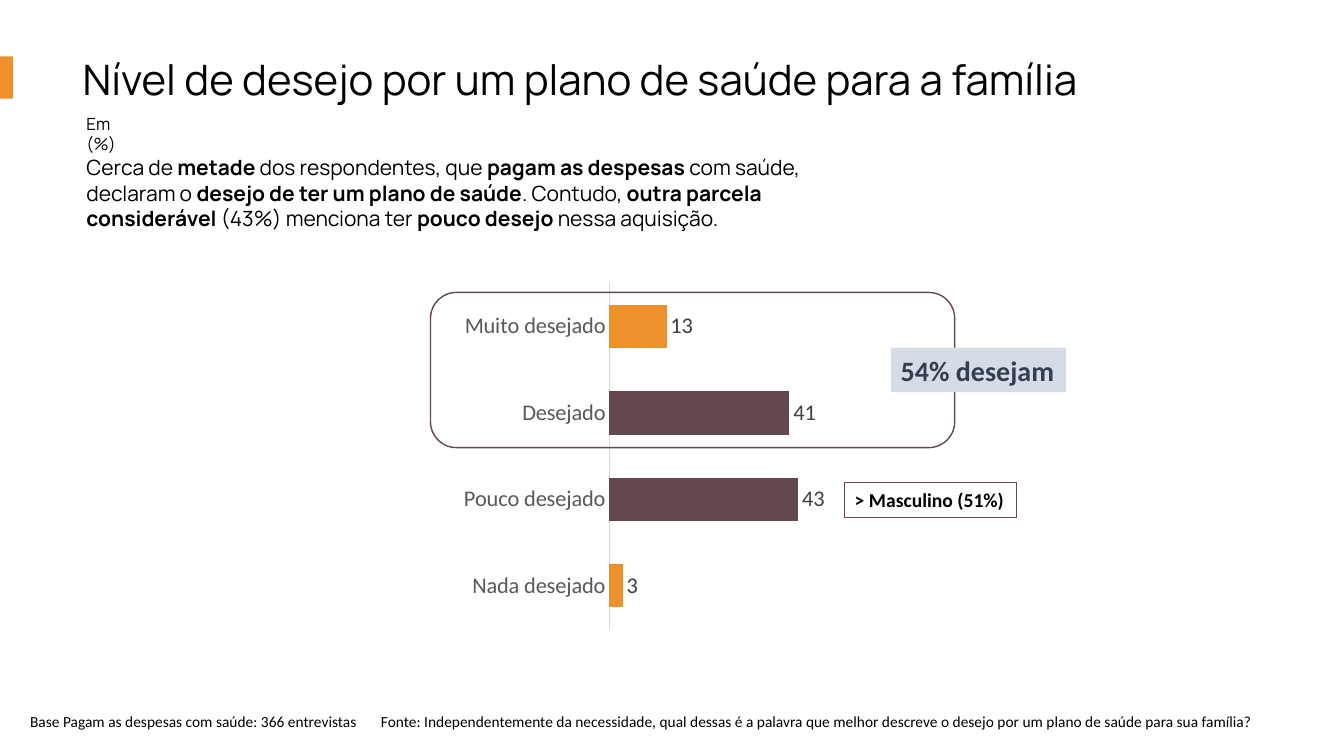
import pptx
import pptx.chart.data
import pptx.dml.color
import pptx.enum.chart
import pptx.enum.shapes
import pptx.enum.text
import pptx.oxml
import pptx.oxml.ns
import pptx.util

Cm = pptx.util.Cm
Pt = pptx.util.Pt
RGBColor = pptx.dml.color.RGBColor
MSO_SHAPE = pptx.enum.shapes.MSO_SHAPE
MSO_ANCHOR = pptx.enum.text.MSO_ANCHOR

BLACK = RGBColor(0x00, 0x00, 0x00)
WHITE = RGBColor(0xFF, 0xFF, 0xFF)
ORANGE = RGBColor(0xEE, 0x90, 0x2C)
PLUM = RGBColor(0x65, 0x48, 0x4D)
PALE_BLUE = RGBColor(0xD6, 0xDC, 0xE5)
NAVY = RGBColor(0x33, 0x3F, 0x50)
AXIS_TEXT = RGBColor(0x59, 0x59, 0x59)
LABEL_TEXT = RGBColor(0x40, 0x40, 0x40)
AXIS_LINE = RGBColor(0xD9, 0xD9, 0xD9)


def write(sp, text, size, font="Calibri", color=BLACK, bold=False, wrap=True,
          anchor=MSO_ANCHOR.TOP):
    """Fill a shape with one left-aligned paragraph; *asterisks* mark bold parts."""
    tf = sp.text_frame
    tf.word_wrap = wrap
    tf.vertical_anchor = anchor
    p = tf.paragraphs[0]
    p.alignment = pptx.enum.text.PP_ALIGN.LEFT
    for i, part in enumerate(text.split("*")):
        r = p.add_run()
        r.text = part
        r.font.size = Pt(size)
        r.font.name = font
        r.font.color.rgb = color
        r.font.bold = bold or i % 2 == 1
    return p


def add_box(kind, left, top, width, height, fill=None, line=None, weight=1):
    sp = s.shapes.add_shape(kind, Cm(left), Cm(top), Cm(width), Cm(height))
    sp.shadow.inherit = False
    if fill is None:
        sp.fill.background()
    else:
        sp.fill.solid()
        sp.fill.fore_color.rgb = fill
    if line is None:
        sp.line.fill.background()
    else:
        sp.line.color.rgb = line
        sp.line.width = Pt(weight)
    return sp


prs = pptx.Presentation()
prs.slide_width = Cm(33.87)
prs.slide_height = Cm(19.05)
s = prs.slides.add_slide(prs.slide_layouts[5])

# Heading
title = s.shapes.title
title.left, title.top, title.width, title.height = Cm(1.83), Cm(1.22), Cm(27.97), Cm(1.55)
write(title, "Nível de desejo por um plano de saúde para a família", 30, "Manrope",
      anchor=MSO_ANCHOR.MIDDLE)
add_box(MSO_SHAPE.RECTANGLE, 0, 1.42, 0.33, 1.07, fill=ORANGE)

# Running text
summary = s.shapes.add_textbox(Cm(1.93), Cm(3.78), Cm(20.78), Cm(2.18))
write(summary, "Cerca de *metade* dos respondentes, que *pagam as despesas *com saúde, "
      "declaram o *desejo de ter um plano de saúde*. Contudo, *outra parcela "
      "considerável *(43%) menciona ter *pouco desejo *nessa aquisição.", 15, "Manrope")
unit = s.shapes.add_textbox(Cm(1.93), Cm(2.74), Cm(1.83), Cm(0.76))
write(unit, "Em (%)", 12, "Manrope")

footer = s.shapes.add_textbox(Cm(0.51), Cm(17.83), Cm(33), Cm(1.19))
p = write(footer, "Base Pagam as despesas com saúde: 366 entrevistas\tFonte: "
          "Independentemente da necessidade, qual dessas é a palavra que melhor "
          "descreve o desejo por um plano de saúde para sua família?", 11)
tabs = pptx.oxml.parse_xml(
    f'<a:tabLst {pptx.oxml.ns.nsdecls("a")}><a:tab pos="{Cm(8.84)}" algn="l"/></a:tabLst>')
p._p.get_or_add_pPr().append(tabs)

# Bar chart
data = pptx.chart.data.CategoryChartData(number_format="####")
data.categories = ["Muito desejado", "Desejado", "Pouco desejado", "Nada desejado"]
data.add_series("Series 1", (13, 41, 43, 3))
chart = s.shapes.add_chart(pptx.enum.chart.XL_CHART_TYPE.BAR_CLUSTERED,
                           Cm(7.06), Cm(6.76), Cm(19.76), Cm(16.23 - 6.76), data).chart
chart.has_title = False
chart.has_legend = False
chart.font.size = Pt(10)
chart.font.name = "Calibri"
chart.font.color.rgb = BLACK

cat_axis = chart.category_axis
cat_axis.reverse_order = True
cat_axis.major_tick_mark = pptx.enum.chart.XL_TICK_MARK.NONE
cat_axis.has_major_gridlines = False
cat_axis.format.line.color.rgb = AXIS_LINE
cat_axis.format.line.width = Pt(0.75)

val_axis = chart.value_axis
val_axis.minimum_scale = 0
val_axis.maximum_scale = 100
val_axis.has_major_gridlines = False
val_axis.visible = False

plot = chart.plots[0]
plot.gap_width = 100
plot.vary_by_categories = False
plot.has_data_labels = True
labels = plot.data_labels
labels.show_value = True
labels.position = pptx.enum.chart.XL_LABEL_POSITION.OUTSIDE_END
labels.number_format = "####"
labels.number_format_is_linked = False
for font, color in ((cat_axis.tick_labels.font, AXIS_TEXT), (labels.font, LABEL_TEXT)):
    font.size = Pt(16)
    font.name = "Calibri"
    font.color.rgb = color

series = plot.series[0]
series.format.fill.solid()
series.format.fill.fore_color.rgb = ORANGE
for i in (1, 2):
    fill = series.points[i].format.fill
    fill.solid()
    fill.fore_color.rgb = PLUM

plot_area = chart._chartSpace.chart.plotArea
for old in plot_area.findall(pptx.oxml.ns.qn("c:layout")):
    plot_area.remove(old)
plot_area.insert(0, pptx.oxml.parse_xml(
    f'<c:layout {pptx.oxml.ns.nsdecls("c")}><c:manualLayout><c:layoutTarget val="inner"/>'
    '<c:xMode val="edge"/><c:yMode val="edge"/><c:x val="0.42"/><c:y val="0.04"/>'
    '<c:w val="0.56"/><c:h val="0.92"/></c:manualLayout></c:layout>'))

# Highlights over the chart
add_box(MSO_SHAPE.ROUNDED_RECTANGLE, 10.85, 7.37, 13.21, 3.91, line=PLUM)
desire = add_box(MSO_SHAPE.RECTANGLE, 22.45, 8.76, 4.42, 1.12, fill=PALE_BLUE)
write(desire, "54% desejam", 20, color=NAVY, bold=True, wrap=False, anchor=MSO_ANCHOR.MIDDLE)
male = add_box(MSO_SHAPE.RECTANGLE, 21.29, 12.17, 4.32, 0.86, fill=WHITE, line=PLUM, weight=0.75)
write(male, "> Masculino (51%)", 14, bold=True, wrap=False, anchor=MSO_ANCHOR.MIDDLE)

prs.save("out.pptx")
